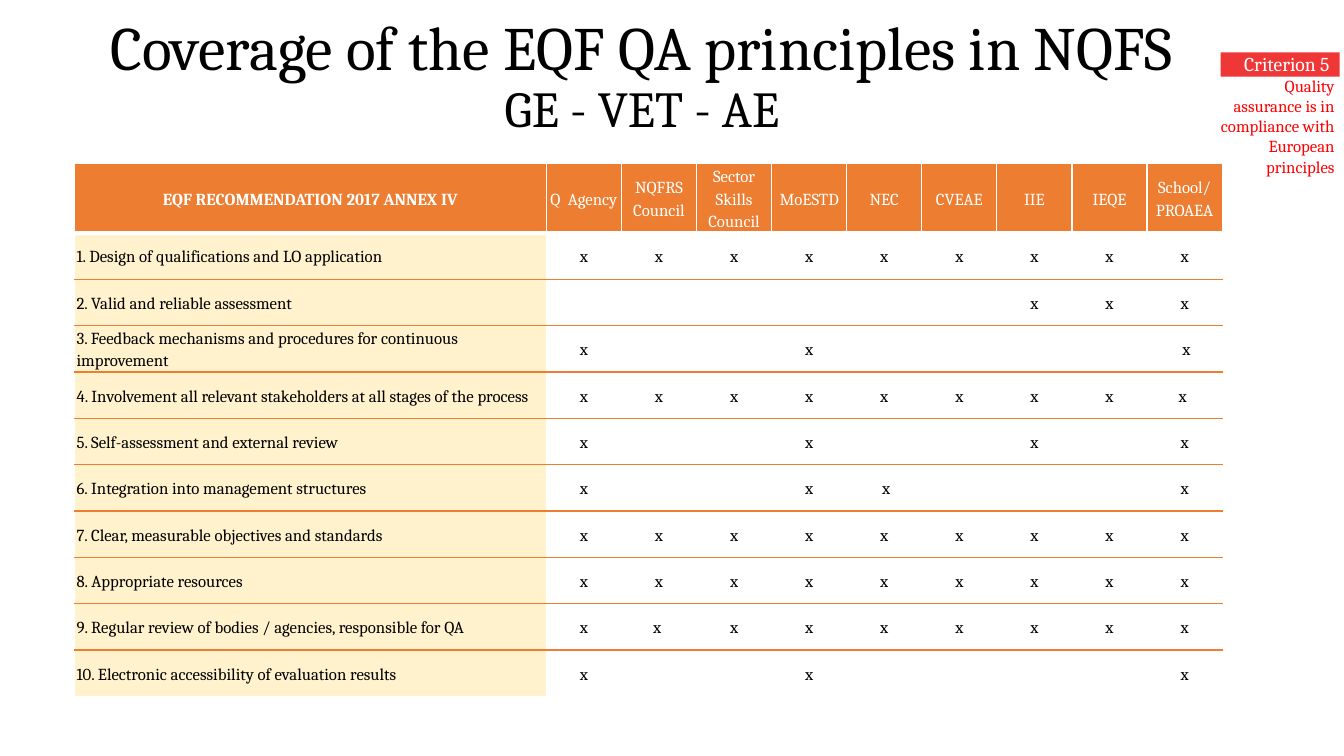
"""Build the slide on coverage of the EQF quality assurance principles."""
import pptx
import pptx.dml.color
import pptx.enum.shapes
import pptx.enum.text
import pptx.oxml
import pptx.oxml.ns
import pptx.util

Pt = pptx.util.Pt
RGBColor = pptx.dml.color.RGBColor
ALIGN = pptx.enum.text.PP_ALIGN
ANCHOR = pptx.enum.text.MSO_ANCHOR

BLACK = RGBColor(0x00, 0x00, 0x00)
WHITE = RGBColor(0xFF, 0xFF, 0xFF)
RED = RGBColor(0xFF, 0x00, 0x00)
BADGE_RED = RGBColor(0xEF, 0x37, 0x38)
ORANGE = RGBColor(0xED, 0x7D, 0x31)
CREAM = RGBColor(0xFF, 0xF2, 0xCC)

TITLE = [("Coverage of the EQF QA principles in NQFS", 44), ("GE - VET - AE", 36)]
HEADINGS = ["EQF RECOMMENDATION 2017 ANNEX IV", "Q  Agency", "NQFRS Council",
            "Sector Skills Council", "MoESTD", "NEC", "CVEAE", "IIE", "IEQE",
            "School/\nPROAEA"]
PRINCIPLES = [
    ("1. Design of qualifications and LO application", "x|x|x|x|x|x|x|x|x"),
    ("2. Valid and reliable assessment", "||||||x|x|x"),
    ("3. Feedback mechanisms and procedures for continuous improvement ",
     "x|||x||||| x"),
    ("4. Involvement all relevant stakeholders at all stages of the process",
     "x|x|x|x|x|x|x|x|x "),
    ("5. Self-assessment and external review", "x|||x|||x||x"),
    ("6. Integration into management structures", "x|||x| x||||x"),
    ("7. Clear, measurable objectives and standards", "x|x|x|x|x|x|x|x|x"),
    ("8. Appropriate resources", "x|x|x|x|x|x|x|x|x"),
    ("9. Regular review of bodies / agencies, responsible for QA",
     "x|x |x|x|x|x|x|x|x"),
    ("10. Electronic accessibility of evaluation results", "x|||x|||||x"),
]
PRINCIPLE_WIDTH, BODY_WIDTH = 337.0, 53.64
HEADING_HEIGHT, PRINCIPLE_HEIGHT = 37.44, 33.12


def apply_format(target, values):
    """Set each named attribute of the target."""
    for name, value in values.items():
        setattr(target, name, value)


def style_font(font, size, color, bold=False):
    """Give a font the slide's typeface with a size and a colour."""
    apply_format(font, {"name": "Cambria", "size": Pt(size), "bold": bold})
    font.color.rgb = color


def add_title(slide):
    """Add the centred title with its smaller second line."""
    title = slide.shapes.add_textbox(Pt(44.64), Pt(29.52), Pt(828), Pt(52.56))
    apply_format(title.text_frame, {"word_wrap": True, "vertical_anchor": ANCHOR.MIDDLE})
    heading = title.text_frame.paragraphs[0]
    apply_format(heading, {"alignment": ALIGN.CENTER, "line_spacing": 0.9})
    for index, (wording, size) in enumerate(TITLE):
        if index:
            heading.add_line_break()
        line = heading.add_run()
        line.text = wording
        style_font(line.font, size, BLACK)


def add_side_note(slide, bounds, wording, size, color, right_inset, fill=None):
    """Add a right-aligned note, on a filled rectangle if a fill is given."""
    note = slide.shapes.add_shape(pptx.enum.shapes.MSO_SHAPE.RECTANGLE,
                                  *map(Pt, bounds)) if fill else \
        slide.shapes.add_textbox(*map(Pt, bounds))
    if fill:
        note.shadow.inherit = False
        note.fill.solid()
        note.fill.fore_color.rgb = fill
        note.line.fill.background()
    apply_format(note.text_frame, {
        "text": wording, "word_wrap": True, "vertical_anchor": ANCHOR.TOP,
        "margin_left": Pt(7.2), "margin_right": Pt(right_inset),
        "margin_top": 0, "margin_bottom": 0})
    sentence = note.text_frame.paragraphs[0]
    sentence.alignment = ALIGN.RIGHT
    style_font(sentence.runs[0].font, size, color)


def set_borders(cell, top, bottom, bottom_width):
    """Draw white side borders and the given top and bottom borders."""
    properties = cell._tc.get_or_add_tcPr()
    sides = [("L", WHITE, 1), ("R", WHITE, 1), ("T", top, 1), ("B", bottom, bottom_width)]
    for position, (side, color, width) in enumerate(sides):
        border = pptx.oxml.parse_xml(
            f'<a:ln{side} {pptx.oxml.ns.nsdecls("a")} w="{Pt(width)}">'
            f'<a:solidFill><a:srgbClr val="{color}"/></a:solidFill></a:ln{side}>')
        properties.insert(position, border)


def fill_cell(cell, wording, fill, color, alignment, bold=False):
    """Write a table cell's text and set its fill and layout."""
    apply_format(cell, {
        "text": wording, "vertical_anchor": ANCHOR.MIDDLE,
        "margin_left": Pt(1.44), "margin_right": Pt(1.44),
        "margin_top": 0, "margin_bottom": 0})
    for paragraph in cell.text_frame.paragraphs:
        apply_format(paragraph, {"alignment": alignment, "line_spacing": 1.15})
        style_font(paragraph.font, 12, color, bold)
        for run in paragraph.runs:
            style_font(run.font, 12, color, bold)
    if fill:
        cell.fill.solid()
        cell.fill.fore_color.rgb = fill
    else:
        cell.fill.background()


def add_coverage(slide):
    """Add the table of principles against institutions."""
    coverage = slide.shapes.add_table(
        len(PRINCIPLES) + 1, len(HEADINGS),
        Pt(53.28), Pt(116.64), Pt(820), Pt(379.44)).table
    apply_format(coverage, {"first_row": False, "horz_banding": False})
    for index, column in enumerate(coverage.columns):
        column.width = Pt(BODY_WIDTH if index else PRINCIPLE_WIDTH)
    for index, row in enumerate(coverage.rows):
        row.height = Pt(PRINCIPLE_HEIGHT if index else HEADING_HEIGHT)
    for column, heading in enumerate(HEADINGS):
        cell = coverage.cell(0, column)
        fill_cell(cell, heading, ORANGE, WHITE, ALIGN.CENTER, bold=column == 0)
        set_borders(cell, WHITE, WHITE, 3)
    for row, (principle, marks) in enumerate(PRINCIPLES, start=1):
        for column, wording in enumerate([principle, *marks.split("|")]):
            cell = coverage.cell(row, column)
            fill_cell(cell, wording, None if column else CREAM, BLACK,
                      ALIGN.CENTER if column else ALIGN.LEFT)
            set_borders(cell, WHITE if row == 1 else ORANGE,
                        WHITE if row == len(PRINCIPLES) else ORANGE,
                        3 if row == 0 else 1)


def main():
    """Build and save the slide."""
    deck = pptx.Presentation()
    apply_format(deck, {"slide_width": Pt(960), "slide_height": Pt(540)})
    slide = deck.slides.add_slide(deck.slide_layouts[6])
    add_side_note(slide, (871.92, 37.44, 84.96, 17.28), "Criterion 5",
                  14, WHITE, 7.2, BADGE_RED)
    add_side_note(slide, (861.12, 54, 95.04, 72.72),
                  "Quality assurance is in compliance with European principles",
                  12, RED, 2.88)
    add_title(slide)
    add_coverage(slide)
    deck.save("out.pptx")


if __name__ == "__main__":
    main()
